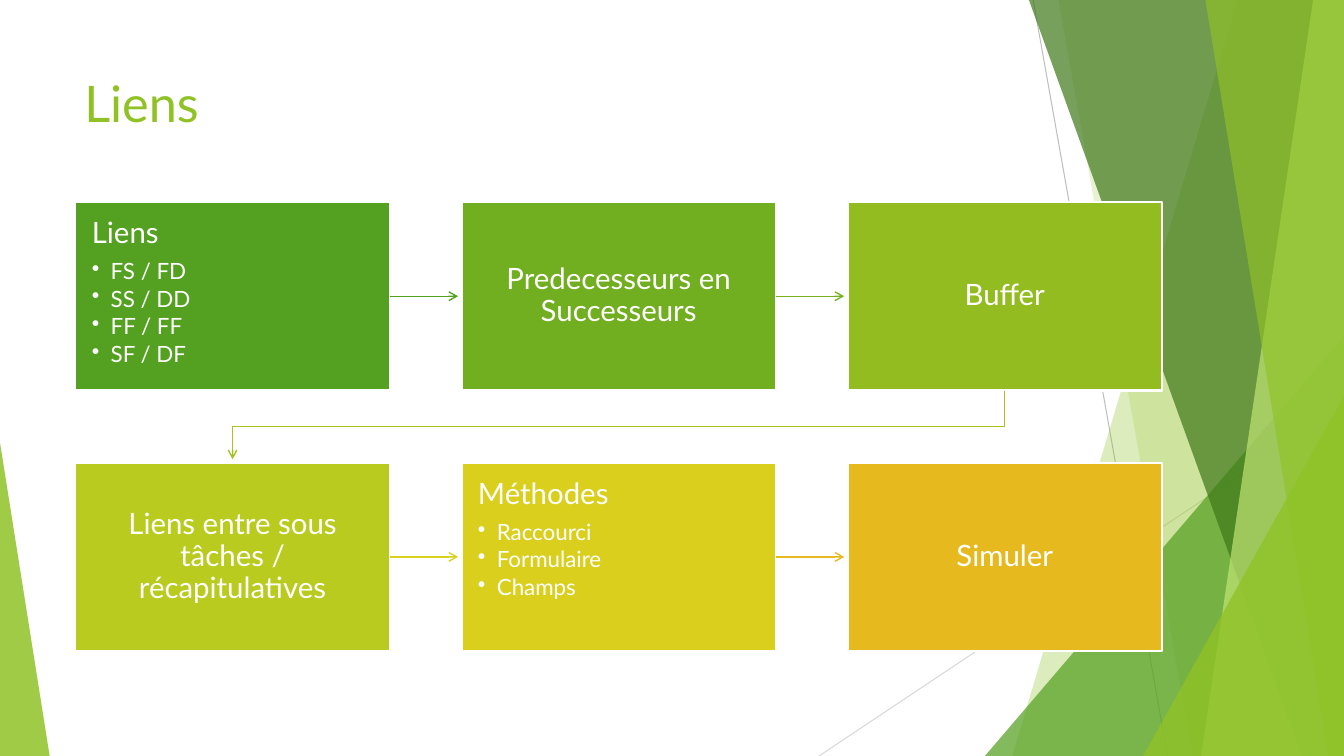
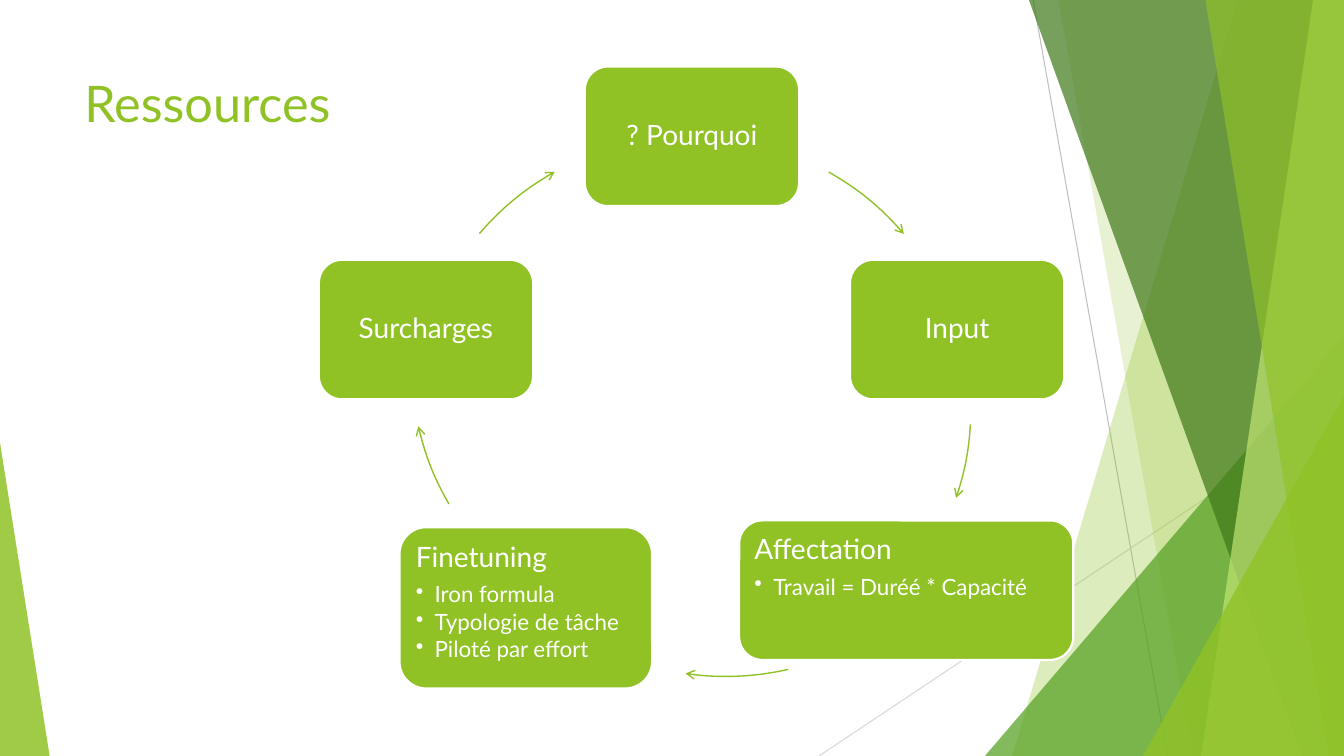
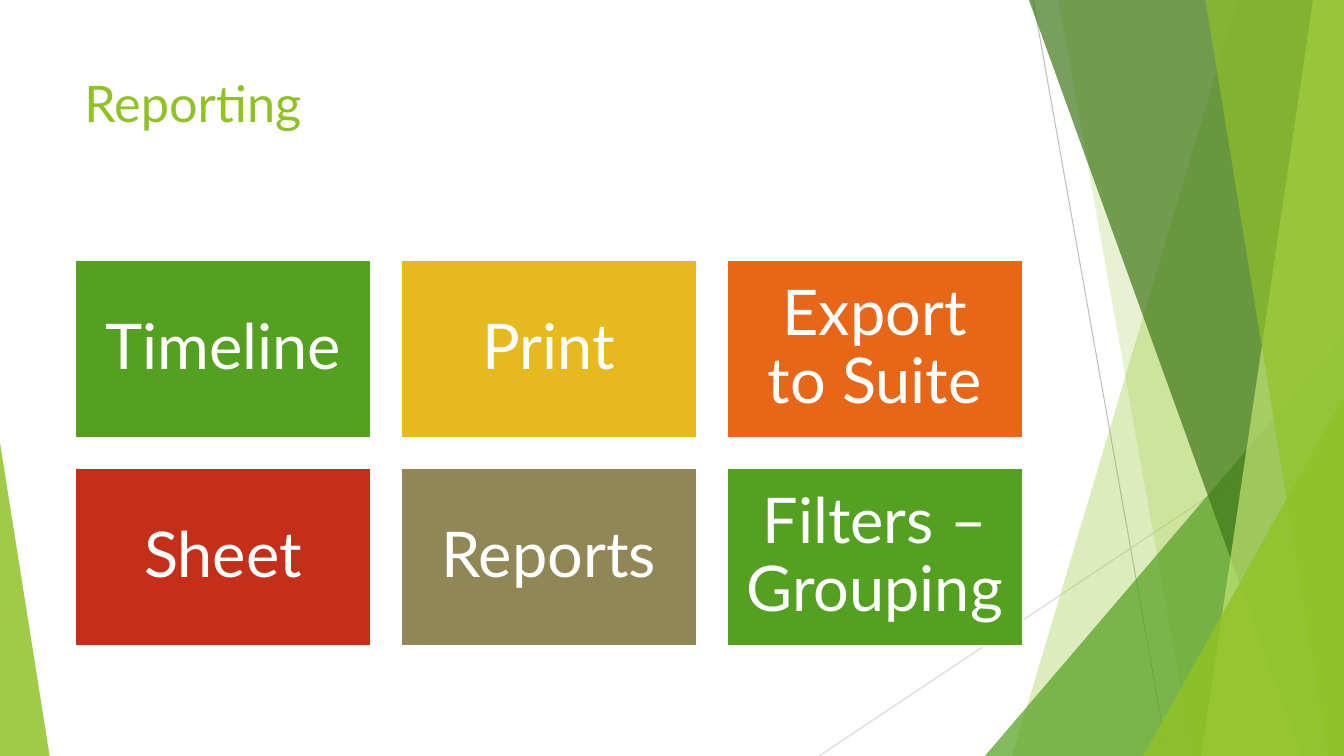
import lxml.etree
import pptx
import pptx.dml.color
import pptx.enum.shapes
import pptx.enum.text
import pptx.oxml.ns
import pptx.util

Pt = pptx.util.Pt
qn = pptx.oxml.ns.qn
SHAPE = pptx.enum.shapes.MSO_SHAPE
ALIGN = pptx.enum.text.PP_ALIGN
ANCHOR = pptx.enum.text.MSO_ANCHOR

FONT = "Lato"
WIDE, HIGH = 960, 540
COLORS = {
    "white": "FFFFFF", "lime": "90C226", "green": "54A021", "forest": "3F7819",
    "pale": "C0E474", "gold": "E6B91E", "orange": "E76618", "red": "C42F1A",
    "olive": "918655", "gray": "BFBFBF", "silver": "D9D9D9",
    "leaf": "71AE20", "moss": "92BC1F", "pear": "B9CB1E", "lemon": "DACF1C",
    "leaf line": "79B220", "pear line": "A5C41F", "lemon line": "D7D31D",
}


def rgb(name):
    return pptx.dml.color.RGBColor.from_string(COLORS[name])


def add(parent, tag, **attrs):
    return lxml.etree.SubElement(parent, qn(tag), attrs)


def write(para, text, size, color="white", align=ALIGN.LEFT, after=0, bullet=False):
    """Put text in a paragraph; after is a share of the text size."""
    run = para.add_run()
    run.text = text
    run.font.name = FONT
    run.font.size = Pt(size)
    run.font.color.rgb = rgb(color)
    para.alignment = align
    para.line_spacing = 0.9
    para.space_after = Pt(size * after)
    if bullet:
        para.level = 1
        props = para._p.get_or_add_pPr()
        props.set("marL", str(Pt(13.5)))
        props.set("indent", str(-Pt(13.5)))
        add(props, "a:buChar", char="•")


def stroke(shape, color, width=1, arrow=False):
    shape.line.color.rgb = rgb(color)
    shape.line.width = Pt(width)
    if arrow:
        add(shape.element.xpath(".//a:ln")[0], "a:tailEnd", type="arrow")


def link(shapes, start, end, color, width=1, arrow=True):
    kind = pptx.enum.shapes.MSO_CONNECTOR.STRAIGHT
    line = shapes.add_connector(kind, *map(Pt, start + end))
    stroke(line, color, width, arrow)
    add(line.element.spPr, "a:effectLst")


def trace(shapes, points, close):
    start, *rest = [tuple(map(Pt, point)) for point in points]
    pen = shapes.build_freeform(*start, scale=1.0)
    pen.add_line_segments(rest, close=close)
    shape = pen.convert_to_shape()
    shape.shadow.inherit = False
    return shape


def tint(shape, color, alpha):
    """Fill with a see-through colour, without an outline."""
    shape.shadow.inherit = False
    shape.fill.solid()
    shape.fill.fore_color.rgb = rgb(color)
    shape.line.fill.background()
    tone = shape.element.xpath("./p:spPr/a:solidFill/a:srgbClr")[0]
    add(tone, "a:alpha", val=str(alpha * 1000))


def band(shapes, top, foot, color, alpha):
    """Band from a slanted left edge to the right side of the slide."""
    points = [(top, 0), (WIDE, 0), (WIDE, HIGH), (foot, HIGH)]
    tint(trace(shapes, points, True), color, alpha)


def wedge(shapes, left, top, width, peak, color, alpha):
    """Triangle standing on the bottom of the slide."""
    box = map(Pt, (left, top, width, HIGH - top))
    shape = shapes.add_shape(SHAPE.ISOSCELES_TRIANGLE, *box)
    shape.adjustments[0] = peak
    tint(shape, color, alpha)


def decor(shapes):
    link(shapes, (738, 0), (834, HIGH), "gray", 0.75, False)
    link(shapes, (WIDE, 290), (585, HIGH), "silver", 0.75, False)
    band(shapes, 884, 723, "lime", 30)
    band(shapes, 756, 852, "lime", 20)
    wedge(shapes, 703.5, 240, 256.5, 1, "green", 72)
    band(shapes, 735, 930, "forest", 70)
    band(shapes, 938, 858, "pale", 70)
    band(shapes, 861, 949, "lime", 65)
    wedge(shapes, 816.5, 283, 143.5, 1, "lime", 80)
    wedge(shapes, 0, 316, 35.5, 0, "lime", 85)


def style(layout, slide):
    """Format the layout's title and move the decor, drawn on slide, to it."""
    title = layout.placeholders[0]
    title.left, title.top, title.width, title.height = map(Pt, (53, 48, 677, 104))
    title.text_frame.vertical_anchor = ANCHOR.TOP
    level = add(title.element.xpath(".//a:lstStyle")[0], "a:lvl1pPr", algn="l")
    font = add(level, "a:defRPr", sz="3600")
    add(add(font, "a:solidFill"), "a:srgbClr", val=COLORS["lime"])
    add(font, "a:latin", typeface=FONT)

    decor(slide.shapes)
    parts = [shape for shape in slide.shapes if not shape.is_placeholder]
    for spot, shape in enumerate(parts, 2):
        shape.element.xpath(".//p:cNvPr")[0].set("id", str(100 + spot))
        layout.shapes.element.insert(spot, shape.element)


def card(shapes, box, text, color, size, inset, kind=SHAPE.RECTANGLE):
    """Box with a heading; further lines of text become a list."""
    shape = shapes.add_shape(kind, *map(Pt, box))
    shape.shadow.inherit = False
    shape.fill.solid()
    shape.fill.fore_color.rgb = rgb(color)
    stroke(shape, "white", 1.5)
    frame = shape.text_frame
    frame.word_wrap = True
    frame.margin_left = frame.margin_right = Pt(inset)
    frame.margin_top = frame.margin_bottom = Pt(inset)
    head, *items = text.split("\n")
    frame.vertical_anchor = ANCHOR.TOP if items else ANCHOR.MIDDLE
    align = ALIGN.LEFT if items else ALIGN.CENTER
    write(frame.paragraphs[0], head, size, align=align, after=0.35)
    for item in items:
        write(frame.add_paragraph(), item, 16, after=0.15, bullet=True)


def grid(left, top, width, height, across, down):
    """Boxes of three columns and two rows; across and down are the gaps."""
    return [(left + col * (width + across), top + row * (height + down), width, height)
            for row in range(2) for col in range(3)]


def curve(shapes, left, top, start, end):
    """Clockwise arrow along a circle, between two angles in degrees."""
    shape = shapes.add_shape(SHAPE.ARC, *map(Pt, (left, top, 399, 399)))
    shape.shadow.inherit = False
    shape.fill.background()
    shape.adjustments[0] = start * 0.6
    shape.adjustments[1] = end * 0.6
    stroke(shape, "lime", arrow=True)


def links(shapes):
    steps = [
        ("Liens\nFS / FD\nSS / DD\nFF / FF\nSF / DF", "green", "green"),
        ("Predecesseurs en Successeurs", "leaf", "leaf line"),
        ("Buffer", "moss", "pear line"),
        ("Liens entre sous tâches / récapitulatives", "pear", "lemon line"),
        ("Méthodes\nRaccourci\nFormulaire\nChamps", "lemon", "gold"),
        ("Simuler", "gold", None),
    ]
    boxes = grid(53.8, 144.2, 224.6, 134.8, 51.2, 51.4)
    for box, (text, color, _) in zip(boxes, steps):
        card(shapes, box, text, color, 21, 11.8)
    for box, after, (_, _, color) in zip(boxes, boxes[1:], steps):
        left, top, width, height = box
        if after[1] == top:
            mid = top + height / 2
            link(shapes, (left + width, mid), (after[0] - 2.4, mid), color)
        else:
            start, end = left + width / 2, after[0] + width / 2
            foot, turn = top + height, top + height + 25.7
            points = [(start, foot), (start, turn), (end, turn), (end, after[1] - 2.4)]
            elbow = trace(shapes, points, False)
            elbow.fill.background()
            stroke(elbow, color, arrow=True)


def means(shapes):
    nodes = [
        ((417.8, 47.6, 153, 99.6), "? Pourquoi"),
        ((607.2, 185.6, 153, 99.6), "Input"),
        ((528, 371.8, 238.6, 99.6), "Affectation\nTravail = Duréé * Capacité"),
        ((285.4, 376.6, 180.4, 115.2),
         "Finetuning\nIron formula\nTypologie de tâche\nPiloté par effort"),
        ((227.8, 185.6, 153, 99.6), "Surcharges"),
    ]
    for box, text in nodes:
        card(shapes, box, text, "lime", 20, 6, SHAPE.ROUNDED_RECTANGLE)
    curve(shapes, 294.5, 97.2, 299.4, 319.5)
    curve(shapes, 294.5, 92.2, 3.3, 18.7)
    curve(shapes, 319, 84.2, 77.1, 98.3)
    curve(shapes, 293.8, 60.5, 149.9, 167.1)
    curve(shapes, 294.5, 97.2, 220.6, 240.7)


def report(shapes):
    tiles = [("Timeline", "green"), ("Print", "gold"), ("Export to Suite", "orange"),
             ("Sheet", "red"), ("Reports", "olive"), ("Filters – Grouping", "green")]
    boxes = grid(53.4, 186, 211.6, 127, 21.2, 21.2)
    for box, (text, color) in zip(boxes, tiles):
        card(shapes, box, text, color, 45, 13.5)


def main():
    deck = pptx.Presentation()
    deck.slide_width, deck.slide_height = Pt(WIDE), Pt(HIGH)
    layout = deck.slide_layouts[5]
    pages = [("Liens", links), ("Ressources", means), ("Reporting", report)]
    for count, (title, fill) in enumerate(pages):
        slide = deck.slides.add_slide(layout)
        if count == 0:
            style(layout, slide)
        slide.shapes.title.text_frame.text = title
        fill(slide.shapes)
    deck.save("out.pptx")


if __name__ == "__main__":
    main()
